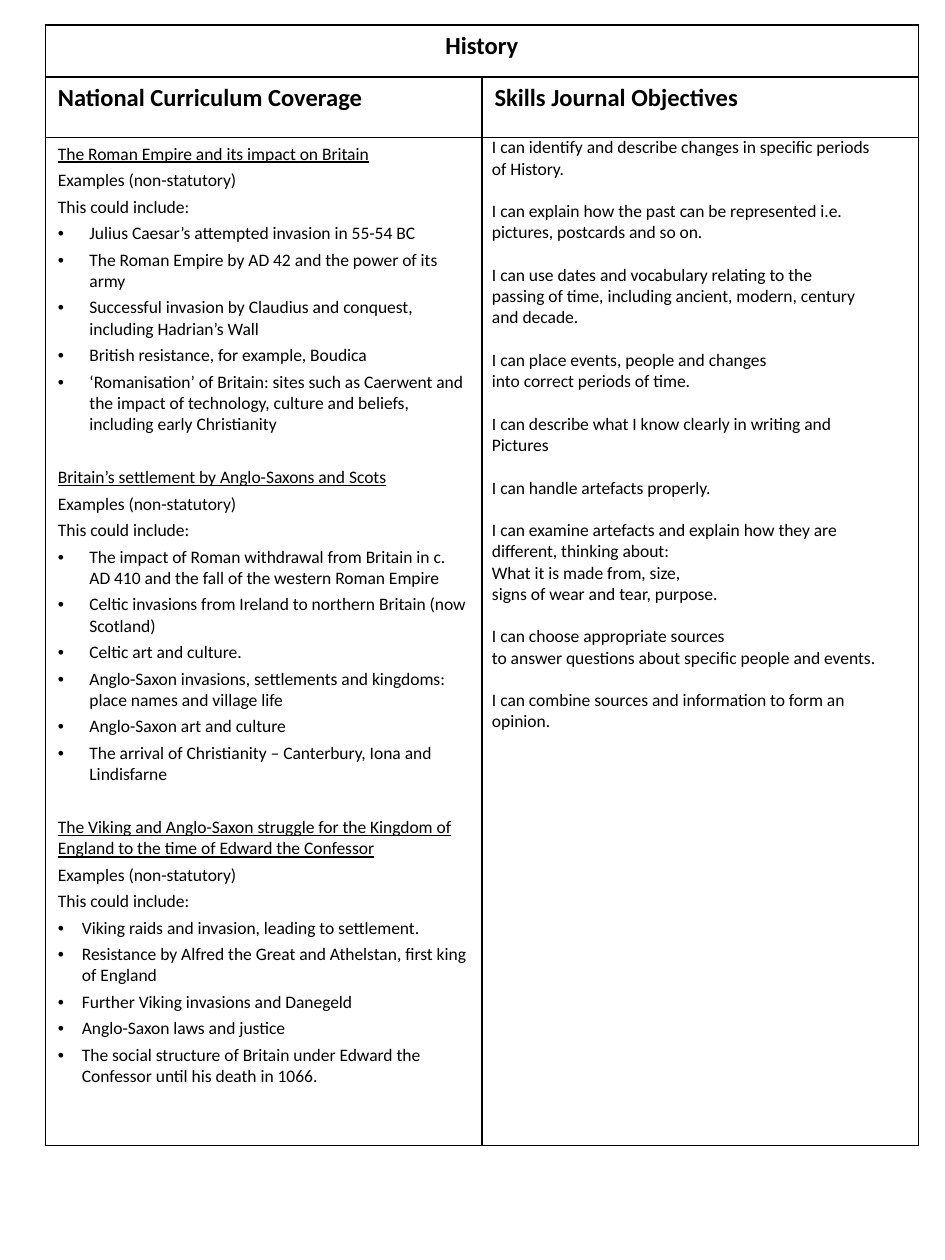
import pptx
import pptx.dml.color
import pptx.enum.text
import pptx.oxml
import pptx.oxml.ns
import pptx.util

Inches, Pt = pptx.util.Inches, pptx.util.Pt
INK = "000000"
NOTES = ["Examples (non-statutory)", "This could include:"]
TOPICS = [
    ("The Roman Empire and its impact on Britain", 0.25, [
        "Julius Caesar’s attempted invasion in 55-54 BC",
        "The Roman Empire by AD 42 and the power of its army",
        "Successful invasion by Claudius and conquest, including Hadrian’s Wall",
        "British resistance, for example, Boudica",
        "‘Romanisation’ of Britain: sites such as Caerwent and the impact of "
        "technology, culture and beliefs, including early Christianity"]),
    ("Britain’s settlement by Anglo-Saxons and Scots", 0.25, [
        "The impact of Roman withdrawal from Britain in c. AD 410 and the fall "
        "of the western Roman Empire",
        "Celtic invasions from Ireland to northern Britain (now Scotland)",
        "Celtic art and culture.",
        "Anglo-Saxon invasions, settlements and kingdoms: place names and village life",
        "Anglo-Saxon art and culture",
        "The arrival of Christianity – Canterbury, Iona and Lindisfarne"]),
    ("The Viking and Anglo-Saxon struggle for the Kingdom of England to the "
     "time of Edward the Confessor", 0.19, [
        "Viking raids and invasion, leading to settlement.",
        "Resistance by Alfred the Great and Athelstan, first king of England",
        "Further Viking invasions and Danegeld",
        "Anglo-Saxon laws and justice",
        "The social structure of Britain under Edward the Confessor until his "
        "death in 1066."]),
]
SKILLS = [
    ["I can identify and describe changes in specific periods", "of History."],
    ["I can explain how the past can be represented i.e.",
     "pictures, postcards and so on."],
    ["I can use dates and vocabulary relating to the",
     "passing of time, including ancient, modern, century", "and decade."],
    ["I can place events, people and changes", "into correct periods of time."],
    ["I can describe what I know clearly in writing and", "Pictures"],
    ["I can handle artefacts properly."],
    ["I can examine artefacts and explain how they are", "different, thinking about:",
     "What it is made from, size,", "signs of wear and tear, purpose."],
    ["I can choose appropriate sources",
     "to answer questions about specific people and events."],
    ["I can combine sources and information to form an", "opinion."],
]


def color(code):
    """Turn a hex string into a colour."""
    return pptx.dml.color.RGBColor.from_string(code)


def write(cell, text, size=10, bold=False, line=False, before=0, after=0):
    """Add a formatted paragraph to a cell, filling its empty first one."""
    frame = cell.text_frame
    para = frame.add_paragraph() if frame.text else frame.paragraphs[0]
    para.text = text
    para.space_before, para.space_after = Pt(before), Pt(after)
    font = para.runs[0].font
    font.name, font.size = "Calibri", Pt(size)
    font.bold, font.underline = bold, line
    font.color.rgb = color(INK)
    return para


def bullet(para, indent):
    """Give a paragraph a hanging bullet."""
    props = para._p.get_or_add_pPr()
    props.set("marL", str(Inches(indent)))
    props.set("indent", str(-Inches(indent)))
    space = pptx.oxml.ns.nsdecls("a")
    for tag in (f'<a:buFont {space} typeface="Arial"/>', f'<a:buChar {space} char="•"/>'):
        props.append(pptx.oxml.parse_xml(tag))


def border(cell):
    """Clear the fill and draw all four edges of a cell."""
    cell.fill.background()
    props = cell._tc.get_or_add_tcPr()
    for spot, side in enumerate(("lnL", "lnR", "lnT", "lnB")):
        props.insert(spot, pptx.oxml.parse_xml(
            f'<a:{side} {pptx.oxml.ns.nsdecls("a")} w="{Pt(1)}"><a:solidFill>'
            f'<a:srgbClr val="{INK}"/></a:solidFill></a:{side}>'))


def topics(cell):
    """Write the curriculum topics with their bullets."""
    for index, (head, indent, items) in enumerate(TOPICS):
        write(cell, head, line=True, before=15.2 if index else 0, after=3)
        for note in NOTES:
            write(cell, note, after=3)
        for item in items:
            bullet(write(cell, item, after=3), indent)


def skills(cell):
    """Write the groups of skills, set apart by one line."""
    cell.margin_left = cell.margin_right = Inches(0.08)
    cell.margin_top = cell.margin_bottom = 0
    for index, group in enumerate(SKILLS):
        for row, text in enumerate(group):
            write(cell, text, before=12.2 if index and not row else 0)


def plan(slide, left, top, width, heights):
    """Build the subject table in the given box."""
    shape = slide.shapes.add_table(
        len(heights), 2, Inches(left), Inches(top), Inches(width), Inches(sum(heights)))
    table = shape.table
    table.first_row = table.horz_banding = False
    for row, height in zip(table.rows, heights):
        row.height = Inches(height)
    for cell in table.iter_cells():
        border(cell)
    table.cell(0, 0).merge(table.cell(0, 1))
    title = write(table.cell(0, 0), "History", 14, True)
    title.alignment = pptx.enum.text.PP_ALIGN.CENTER
    for col, head in enumerate(["National Curriculum Coverage", "Skills Journal Objectives"]):
        write(table.cell(1, col), head, 14, True)
    topics(table.cell(2, 0))
    skills(table.cell(2, 1))


def main():
    """Make the deck and save it."""
    deck = pptx.Presentation()
    deck.slide_width, deck.slide_height = Inches(7.5), Inches(10)
    slide = deck.slides.add_slide(deck.slide_layouts[6])
    plan(slide, 0.36, 0.2, 6.93, [0.41, 0.48, 8])
    deck.save("out.pptx")


if __name__ == "__main__":
    main()
